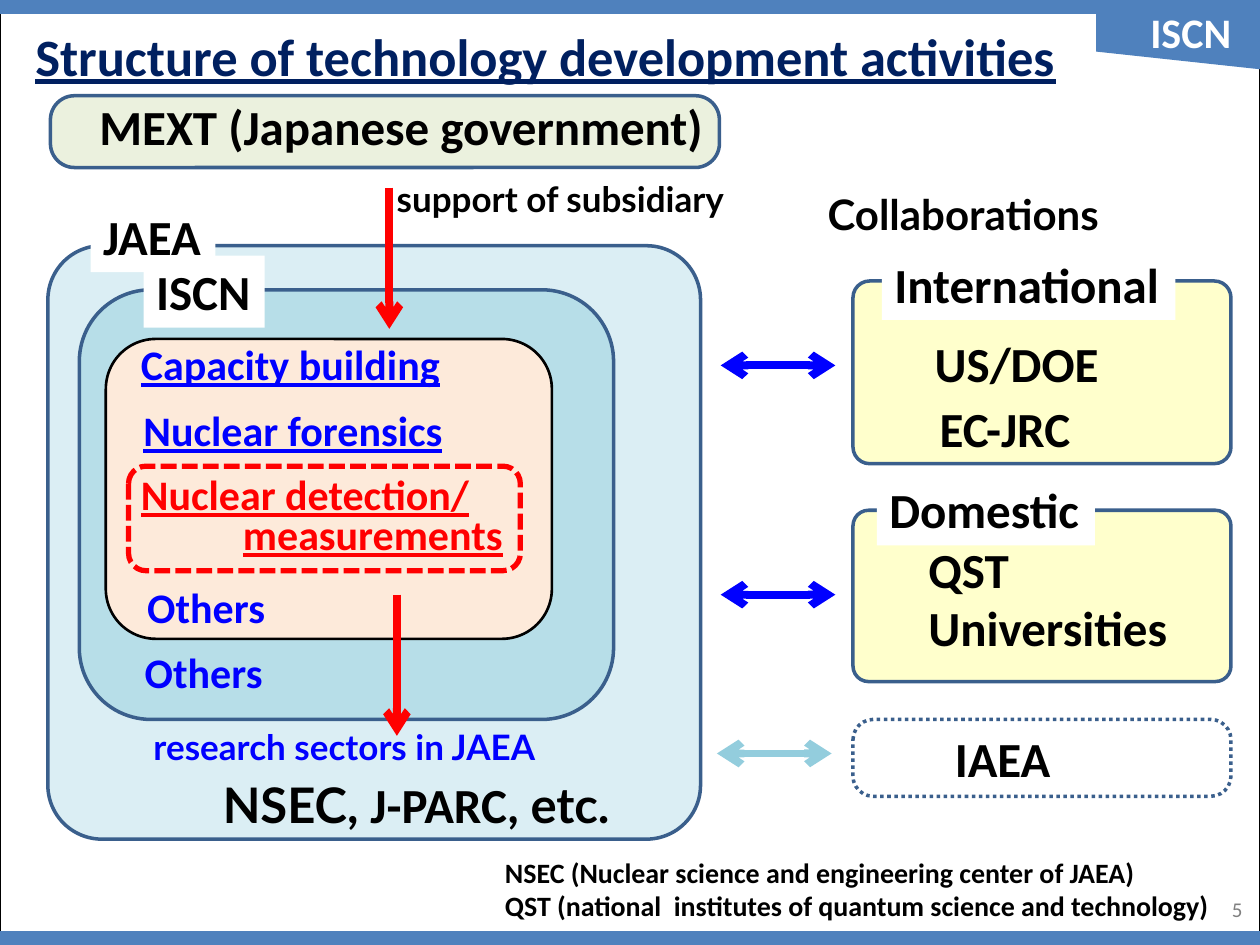
from dataclasses import dataclass

from pptx import Presentation
from pptx.dml.color import RGBColor
from pptx.enum.dml import MSO_LINE_DASH_STYLE as Dash
from pptx.enum.shapes import MSO_CONNECTOR as Connector, MSO_SHAPE as Shape
from pptx.enum.text import MSO_ANCHOR as Anchor, MSO_AUTO_SIZE as AutoSize, PP_ALIGN as Align
from pptx.oxml.ns import qn
from pptx.util import Inches, Pt
from lxml.etree import SubElement


@dataclass(frozen=True)
class Theme:
    """Colours, fonts and type sizes of the slide."""
    bar: str = "4F81BD"
    outline: str = "3A5F8C"
    navy: str = "002060"
    black: str = "000000"
    white: str = "FFFFFF"
    grey: str = "808080"
    blue: str = "0000FF"
    red: str = "FF0000"
    pale_arrow: str = "93CDDD"
    agency: str = "DBEEF4"
    center: str = "B7DEE8"
    topics: str = "FDEADA"
    government: str = "EBF1DE"
    partner: str = "FFFFCC"
    body_font: str = "Calibri"
    label_font: str = "Lato"
    title: int = 30
    heading: int = 28
    topic: int = 24
    label: int = 20
    footnote: int = 16
    number: int = 12


class SlideBuilder:
    """Draws styled elements on one slide."""

    def __init__(self, slide, theme):
        self.slide = slide
        self.theme = theme

    def paint(self, shape, fill=None, line=None, weight=2, dash=None):
        shape.shadow.inherit = False
        if fill:
            shape.fill.solid()
            shape.fill.fore_color.rgb = RGBColor.from_string(fill)
        else:
            shape.fill.background()
        if line:
            shape.line.color.rgb = RGBColor.from_string(line)
            shape.line.width = Pt(weight)
            if dash:
                shape.line.dash_style = dash
        else:
            shape.line.fill.background()

    def box(self, left, top, width, height, fill=None, line=None,
            kind=Shape.ROUNDED_RECTANGLE, radius=None, **stroke):
        shape = self.slide.shapes.add_shape(
            kind, Inches(left), Inches(top), Inches(width), Inches(height))
        if radius is not None:
            shape.adjustments[0] = radius
        self.paint(shape, fill, line, **stroke)

    def polygon(self, points, fill):
        corners = [(Inches(x), Inches(y)) for x, y in points]
        builder = self.slide.shapes.build_freeform(*corners[0])
        builder.add_line_segments(corners[1:], close=True)
        self.paint(builder.convert_to_shape(), fill)

    def run(self, paragraph, text, size, color, font=None, bold=True, underline=False):
        run = paragraph.add_run()
        run.text = text
        run.font.name = font or self.theme.body_font
        run.font.size = Pt(size)
        run.font.bold = bold
        run.font.underline = underline
        run.font.color.rgb = RGBColor.from_string(color)

    def title(self, text, left, top, width, height):
        shape = self.slide.shapes.title
        shape.left, shape.top = Inches(left), Inches(top)
        shape.width, shape.height = Inches(width), Inches(height)
        frame = shape.text_frame
        frame.auto_size = AutoSize.NONE
        frame.vertical_anchor = Anchor.MIDDLE
        frame.margin_left = frame.margin_right = Inches(0.08)
        frame.margin_top = frame.margin_bottom = Inches(0.02)
        paragraph = frame.paragraphs[0]
        paragraph.alignment = Align.LEFT
        paragraph.line_spacing = Pt(32)
        self.run(paragraph, text, self.theme.title, self.theme.navy, underline=True)

    def text(self, lines, left, top, width, height, size=None, color=None,
             align=Align.LEFT, wrap=False, fill=None, **style):
        """Each line is a string or a list of (text, font) pairs."""
        shape = self.slide.shapes.add_textbox(
            Inches(left), Inches(top), Inches(width), Inches(height))
        if fill:
            shape.fill.solid()
            shape.fill.fore_color.rgb = RGBColor.from_string(fill)
        frame = shape.text_frame
        frame.word_wrap = wrap
        frame.auto_size = AutoSize.SHAPE_TO_FIT_TEXT
        for index, line in enumerate(lines):
            paragraph = frame.add_paragraph() if index else frame.paragraphs[0]
            paragraph.alignment = align
            parts = [(line, style.get("font"))] if isinstance(line, str) else line
            for text, font in parts:
                self.run(paragraph, text, size or self.theme.heading,
                         color or self.theme.black, **{**style, "font": font})

    def arrow(self, start, end, color, double=False):
        connector = self.slide.shapes.add_connector(
            Connector.STRAIGHT, *(Inches(value) for value in (*start, *end)))
        connector.line.color.rgb = RGBColor.from_string(color)
        connector.line.width = Pt(4.5)
        line = connector.line._get_or_add_ln()
        for tag in ("a:headEnd", "a:tailEnd") if double else ("a:tailEnd",):
            SubElement(line, qn(tag)).set("type", "arrow")
        SubElement(connector._element.spPr, qn("a:effectLst"))


def build():
    presentation = Presentation()
    presentation.slide_width, presentation.slide_height = Inches(10), Inches(7.5)
    slide = presentation.slides.add_slide(presentation.slide_layouts[5])
    theme = Theme()
    page = SlideBuilder(slide, theme)

    page.box(0, 0, 10, 7.5, line=theme.black, weight=0.5, kind=Shape.RECTANGLE)
    for top in (0, 7.39):
        page.box(0, top, 10, 0.11, theme.bar, kind=Shape.RECTANGLE)
    page.polygon([(8.7, 0.01), (10, 0.01), (10, 0.55), (8.7, 0.41)], theme.bar)
    page.text(["ISCN"], 8.94, 0, 1.02, 0.51, theme.topic, theme.white,
              align=Align.CENTER, wrap=True)
    page.title("Structure of technology development activities", 0.2, 0.19, 9.74, 0.55)

    page.box(6.77, 5.71, 3, 0.61, theme.white, theme.outline,
             radius=0.264, dash=Dash.ROUND_DOT)
    page.box(0.38, 1.95, 5.18, 4.71, theme.agency, theme.outline, radius=0.091)
    page.box(0.63, 2.3, 4.24, 3.41, theme.center, theme.outline)
    page.box(0.84, 2.69, 3.54, 2.38, theme.topics, theme.black, weight=1.5)
    page.box(0.4, 0.76, 5.31, 0.57, theme.government, theme.outline, radius=0.335)
    for top, height in ((2.23, 1.45), (4.05, 1.36)):
        page.box(6.77, top, 3, height, theme.partner, theme.outline, radius=0.091)

    for name, left, top, width in (
            ("JAEA", 0.72, 1.59, 0.99), ("ISCN", 1.14, 2.03, 0.96),
            ("Domestic", 6.96, 3.76, 1.73), ("International", 7, 1.97, 2.33)):
        page.text([name], left, top, width, 0.57, fill=theme.white)
    for name, left, top, width in (
            ("MEXT (Japanese government)", 0.69, 0.72, 5.15),
            ("US/DOE", 7.32, 2.6, 1.51), ("EC-JRC", 7.36, 3.11, 1.26),
            ("QST", 7.27, 4.23, 0.85), ("Universities", 7.27, 4.69, 2.12),
            ("IAEA", 7.48, 5.73, 0.97)):
        page.text([name], left, top, width, 0.57)

    for name, left, top, width, color, underline in (
            ("Capacity building", 1.02, 2.64, 2.6, theme.blue, True),
            ("Nuclear forensics", 1.04, 3.16, 2.6, theme.blue, True),
            ("Nuclear detection/", 1.02, 3.67, 2.84, theme.red, True),
            ("measurements", 1.83, 3.99, 2.29, theme.red, True),
            ("Others", 1.07, 4.57, 1.15, theme.blue, False),
            ("Others", 1.05, 5.08, 1.15, theme.blue, False)):
        page.text([name], left, top, width, 0.5, theme.topic, color, underline=underline)
    page.box(1.02, 3.7, 3.11, 0.83, line=theme.red, weight=3, dash=Dash.SQUARE_DOT)

    for name, left, top, width, height, size, color in (
            ("support of subsidiary", 3.05, 1.36, 2.96, 0.44, theme.label, theme.black),
            ("research sectors in JAEA", 1.12, 5.71, 3.44, 0.44, theme.label, theme.blue),
            ("Collaborations", 6.47, 1.45, 2.44, 0.5, theme.topic, theme.black)):
        page.text([name], left, top, width, height, size, color, font=theme.label_font)
    page.text([[("NSEC, ", theme.label_font), ("J-PARC, ", theme.body_font),
                ("etc.", theme.label_font)]], 1.67, 6.1, 3.64, 0.57, wrap=True)
    page.text(["NSEC (Nuclear science and engineering center of JAEA)",
               "QST (national  institutes of quantum science and technology)"],
              3.91, 6.74, 5.86, 0.64, theme.footnote)
    page.text(["5"], 7.63, 7.07, 2.33, 0.4, theme.number, theme.grey,
              align=Align.RIGHT, wrap=True, bold=False)

    for x, top in ((3.09, 1.49), (3.15, 4.72)):
        page.arrow((x, top), (x, top + 1.12), theme.red)
    for left, y, color in ((5.72, 2.9, theme.blue), (5.72, 4.72, theme.blue),
                           (5.69, 5.98, theme.pale_arrow)):
        page.arrow((left, y), (left + 0.91, y), color, double=True)

    presentation.save("out.pptx")


if __name__ == "__main__":
    build()
